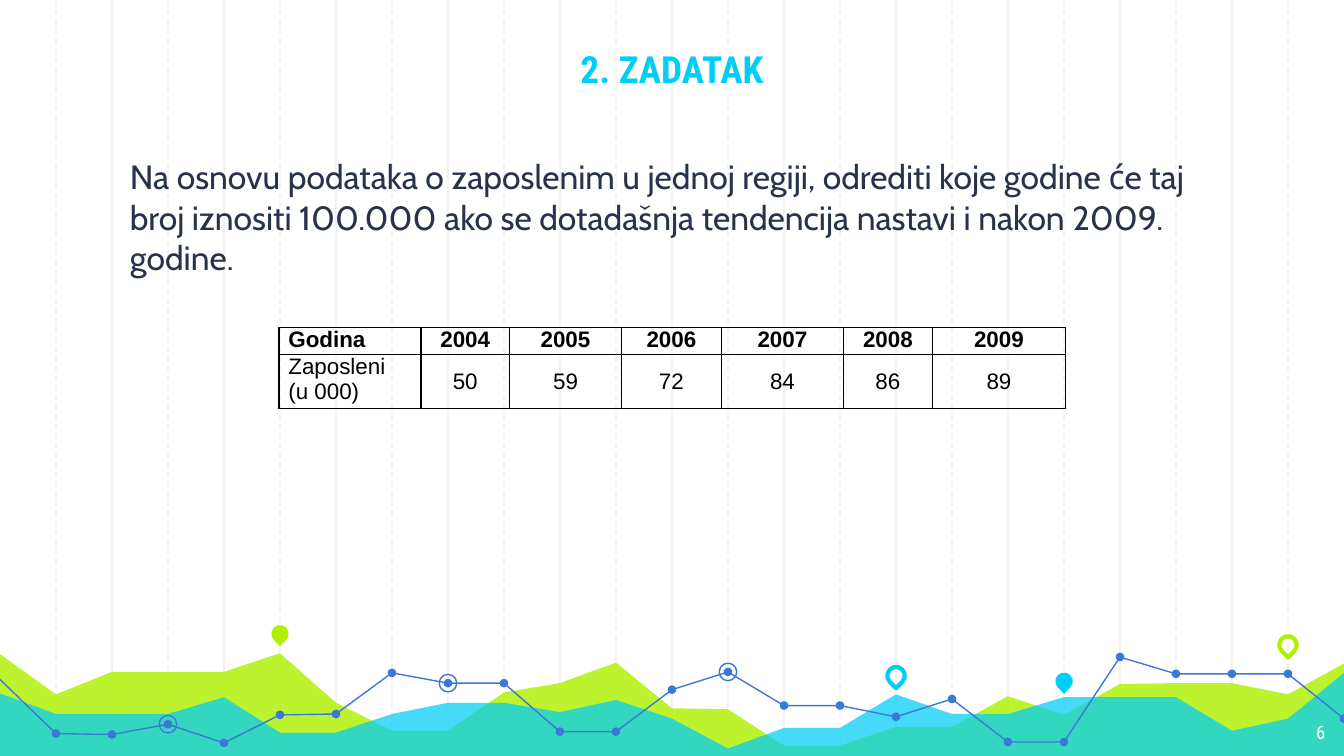
from lxml.etree import SubElement as Sub
from pptx import Presentation
from pptx.dml.color import RGBColor
from pptx.enum.dml import MSO_LINE as Dash
from pptx.enum.shapes import MSO_CONNECTOR as Conn, MSO_SHAPE as Kind
from pptx.enum.text import MSO_ANCHOR as Anchor, PP_ALIGN as Align
from pptx.oxml.ns import qn
from pptx.util import Pt

WIDE, HIGH, STEP = 720, 405, 30
LIME, CYAN, BLUE, NAVY = "AFF000", "00CEF6", "3C78D8", "28324A"
HEAD = "Roboto Condensed"

GREEN = [350.5, 372, 360, 360, 360, 350, 376.5, 391.5, 391.5, 371, 366, 355,
         379.5, 380, 399.5, 399.5, 389.5, 389.5, 373, 383, 366.5, 366, 366,
         372, 355.5]
WATER = [371.5, 382.5, 382.5, 382.5, 373.5, 392.5, 392.5, 382.5, 376.5, 376.5,
         381.5, 375, 385, 401, 390, 390, 372, 382.5, 382.5, 373.5, 373.5,
         373.5, 391.5, 385, 360.5]
TREND = [364, 393, 393.5, 388, 398, 383, 382.5, 360.5, 366, 366, 392, 392,
         369.5, 360, 378, 378, 384, 374.5, 397.5, 397.5, 352, 361, 361, 361,
         385]
RINGS = [3, 8, 13]
PINS = [(5, 339.5, LIME, True), (16, 362, CYAN, False),
        (19, 365, CYAN, True), (23, 345.5, LIME, False)]
COLS = [76, 47.5, 60, 53.5, 65.5, 47.5, 71.5]
ROWS = [["Godina", "2004", "2005", "2006", "2007", "2008", "2009"],
        ["Zaposleni  (u 000)", "50", "59", "72", "84", "86", "89"]]


def color(code):
    return RGBColor.from_string(code)


def paint(shape, fill=None, line=None, width=0.75):
    shape.shadow.inherit = False
    if fill:
        shape.fill.solid()
        shape.fill.fore_color.rgb = color(fill)
    else:
        shape.fill.background()
    if line:
        shape.line.color.rgb = color(line)
        shape.line.width = Pt(width)
    else:
        shape.line.fill.background()


def write(frame, text, size, font, code, bold=False, align=Align.LEFT):
    para = frame.paragraphs[0]
    para.alignment = align
    run = para.add_run()
    run.text = text
    run.font.size = Pt(size)
    run.font.name = font
    run.font.bold = bold
    run.font.color.rgb = color(code)
    return para


def label(slide, box, anchor=Anchor.TOP):
    frame = slide.shapes.add_textbox(*map(Pt, box)).text_frame
    frame.word_wrap = True
    frame.vertical_anchor = anchor
    frame.margin_left = frame.margin_right = Pt(7.2)
    frame.margin_top = frame.margin_bottom = Pt(7.2)
    return frame


def grid(slide, box):
    left, top, width, height = box
    count = width // STEP
    for i in [*range(2, count, 2), *range(1, count, 2)]:
        x = Pt(left + i * STEP)
        rule = slide.shapes.add_connector(
            Conn.STRAIGHT, x, Pt(top), x, Pt(top + height))
        rule.line.color.rgb = color("F3F3F3")
        rule.line.width = Pt(0.75)
        if i % 2:
            rule.line.dash_style = Dash.DASH
        Sub(rule._element.spPr, qn("a:effectLst"))


def trace(slide, points, close):
    path = [(Pt(x), Pt(y)) for x, y in points]
    pen = slide.shapes.build_freeform(*path[0])
    pen.add_line_segments(path[1:], close=close)
    return pen.convert_to_shape()


def area(slide, points, base, code, alpha):
    ends = [(points[-1][0], base), (points[0][0], base)]
    shape = trace(slide, points + ends, True)
    paint(shape, code)
    tint = shape._element.spPr.find(qn("a:solidFill"))[0]
    Sub(tint, qn("a:alpha")).set("val", str(alpha * 1000))


def mark(slide, kind, x, y, size):
    half = size / 2
    return slide.shapes.add_shape(
        kind, Pt(x - half), Pt(y - half), Pt(size), Pt(size))


def chart(slide, box):
    left, top, width, height = box

    def spots(series):
        return [(left + i * STEP, y) for i, y in enumerate(series)]

    base = top + height
    area(slide, spots(GREEN), base, LIME, 82)
    area(slide, spots(WATER), base, CYAN, 73)
    for i, y, code, solid in PINS:
        pin = mark(slide, Kind.TEAR, left + i * STEP, y, 9.4)
        pin.rotation = 135
        if solid:
            paint(pin, code)
        else:
            paint(pin, None, code, 2.25)
    trend = spots(TREND)
    paint(trace(slide, trend, False), None, BLUE)
    for x, y in trend[1:]:
        paint(mark(slide, Kind.OVAL, x, y, 4.6), BLUE)
    for i in RINGS:
        paint(mark(slide, Kind.OVAL, *trend[i], 9.4), None, BLUE)


def border(cell):
    props = cell._tc.get_or_add_tcPr()
    for i, side in enumerate(("lnL", "lnR", "lnT", "lnB")):
        edge = props.makeelement(qn("a:" + side), {"w": str(Pt(0.75))})
        fill = Sub(edge, qn("a:solidFill"))
        Sub(fill, qn("a:srgbClr")).set("val", "000000")
        props.insert(i, edge)


def table(slide, box):
    grid = slide.shapes.add_table(len(ROWS), len(COLS), *map(Pt, box)).table
    grid.first_row = grid.horz_banding = False
    for col, width in zip(grid.columns, COLS):
        col.width = Pt(width)
    for row, part in zip(grid.rows, (1, 2)):
        row.height = Pt(box[3] * part / 3)
    for r, row in enumerate(ROWS):
        for c, text in enumerate(row):
            cell = grid.cell(r, c)
            cell.fill.background()
            cell.margin_left = cell.margin_right = Pt(5)
            cell.margin_top = cell.margin_bottom = 0
            if r and c:
                cell.vertical_anchor = Anchor.MIDDLE
            write(cell.text_frame, text, 12, "Arial", "000000", r == 0,
                  Align.CENTER if c else Align.LEFT)
            border(cell)


def title(slide, box):
    write(label(slide, box, Anchor.BOTTOM), "2. ZADATAK", 20, HEAD, CYAN,
          True, Align.CENTER)


def body(slide, box):
    para = write(
        label(slide, box),
        "Na osnovu podataka o zaposlenim u jednoj regiji, odrediti koje "
        "godine će taj broj iznositi 100.000 ako se dotadašnja tendencija "
        "nastavi i nakon 2009. godine.", 18, "Cabin", NAVY)
    para.space_before = Pt(6)
    para._p.get_or_add_pPr().set("marL", str(Pt(9)))


def number(slide, box):
    write(label(slide, box), "6", 10, HEAD, "FFFFFF", align=Align.RIGHT)


def main():
    deck = Presentation()
    deck.slide_width, deck.slide_height = Pt(WIDE), Pt(HIGH)
    slide = deck.slides.add_slide(deck.slide_layouts[6])
    grid(slide, (0, 0, WIDE, HIGH))
    chart(slide, (0, 335, WIDE, 71))
    number(slide, (674, 380, 43, 25))
    body(slide, (53.5, 76.5, 612, 270))
    title(slide, (84.5, 0, 551, 56))
    table(slide, (149.5, 175.5, sum(COLS), 40.2))
    deck.save("out.pptx")


if __name__ == "__main__":
    main()
